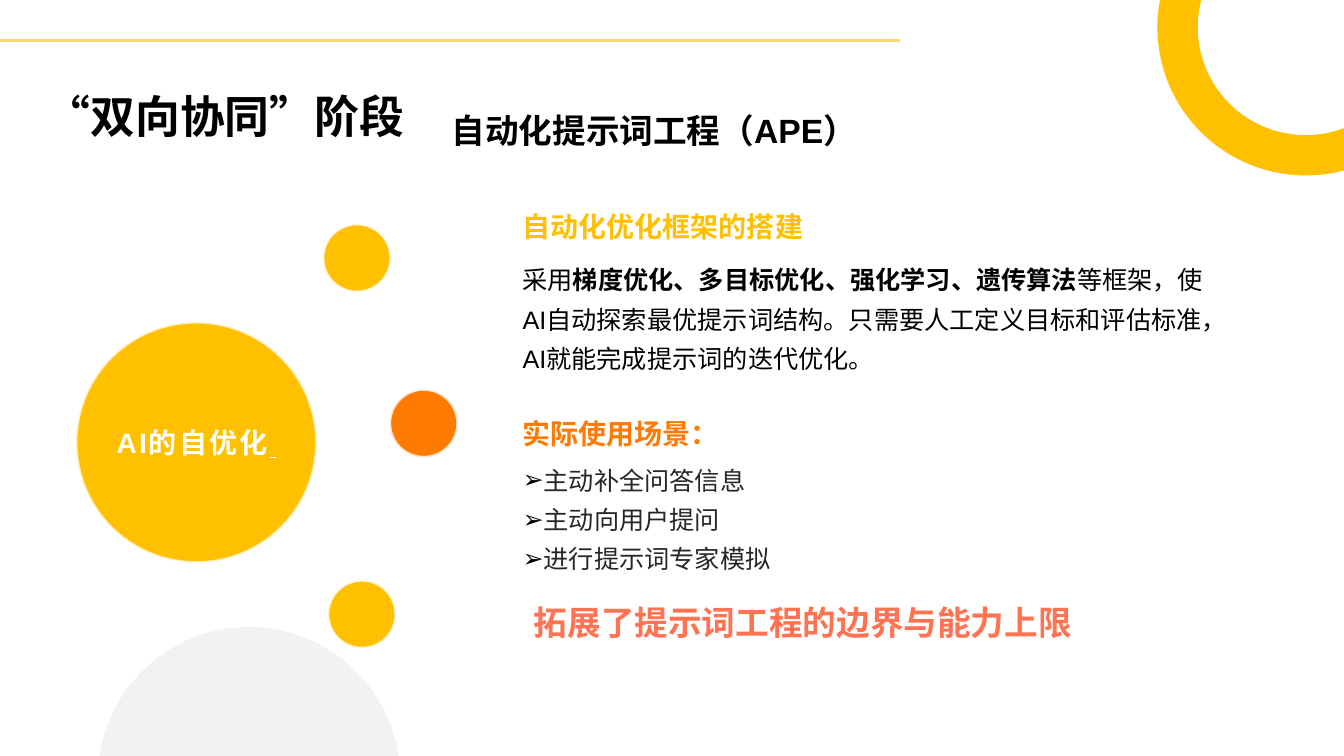
"""Build the slide on automated prompt engineering."""
import math

import pptx
import pptx.dml.color
import pptx.enum.shapes
import pptx.enum.text
import pptx.oxml
import pptx.oxml.ns
import pptx.util

WIDTH, HEIGHT = pptx.util.Inches(13.33), pptx.util.Inches(7.5)
FONT = "Arial"
AMBER, ORANGE, CORAL = "FFC000", "FF7A00", "FF7252"
BLACK, WHITE, CHARCOAL, PALE_AMBER = "000000", "FFFFFF", "262626", "FFD966"
ANCHOR = pptx.enum.text.MSO_ANCHOR
ALIGN = pptx.enum.text.PP_ALIGN

TEXT_LEFT, TEXT_WIDTH = 38.88, 50.94
SUBTITLE = "自动化提示词工程（APE）"
SUBTITLE_AREA = (33.61, 14, 52.06, 6.8)
SCENARIOS = ["主动补全问答信息", "主动向用户提问", "进行提示词专家模拟"]
SCENARIO_AREA = (TEXT_LEFT, 60.33, TEXT_WIDTH, 13.87)
STAGE = "“双向协同”阶段"
STAGE_AREA = (3.4, 10.93, 90.02, 8.93)
METHOD = [
    ("采用", False),
    ("梯度优化、多目标优化、强化学习、遗传算法", True),
    ("等框架，使AI自动探索最优提示词结构。只需要人工定义目标和评估标准，AI就能完成提示词的迭代优化。", False),
]
METHOD_AREA = (TEXT_LEFT, 33.82, TEXT_WIDTH, 16.93)
HEADINGS = [("自动化优化框架的搭建", 24.13, AMBER), ("实际使用场景：", 51.6, ORANGE)]
HEADING_HEIGHT = 8.53
CONCLUSION = "拓展了提示词工程的边界与能力上限"
CONCLUSION_AREA = (TEXT_LEFT, 78.93, 41.71, 6.67)
HUB = "AI的自优化"
HUB_CIRCLE = (14.61, 58.52, 17.78, AMBER, "FFECB2")
DOTS = [
    (31.53, 56, 4.95, ORANGE, "FFE4CC"),
    (26.56, 34.13, 4.95, AMBER, "FFF2CC"),
    (26.93, 81.25, 4.95, AMBER, "FFF2CC"),
]
RING = (97.15, 3.6, 11.03, 8.03)
DOME = (18.53, 102.93, 11.25)
RULE_END, RULE_TOP = 66.99, 5.33


def across(share):
    return round(WIDTH * share / 100)


def down(share):
    return round(HEIGHT * share / 100)


def color(value):
    return pptx.dml.color.RGBColor.from_string(value)


def set_frame(frame, anchor=ANCHOR.TOP, bottom=0):
    frame.word_wrap = True
    frame.auto_size = pptx.enum.text.MSO_AUTO_SIZE.NONE
    frame.vertical_anchor = anchor
    frame.margin_left = frame.margin_right = frame.margin_top = 0
    frame.margin_bottom = pptx.util.Inches(bottom)


def write(para, runs, size, tone, spacing=1.0, align=ALIGN.LEFT):
    para.alignment = align
    para.line_spacing = spacing
    para.space_before = pptx.util.Pt(0)
    for text, bold in runs:
        span = para.add_run()
        span.text = text
        span.font.name = FONT
        span.font.size = pptx.util.Pt(size)
        span.font.bold = bold
        span.font.color.rgb = color(tone)


def place(shape, area):
    left, top, width, height = area
    shape.left, shape.top = across(left), down(top)
    shape.width, shape.height = across(width), down(height)


def add_text(slide, area, runs, size, tone, spacing=1.0, align=ALIGN.LEFT,
             anchor=ANCHOR.TOP, bottom=0):
    box = slide.shapes.add_textbox(0, 0, 0, 0)
    place(box, area)
    set_frame(box.text_frame, anchor, bottom)
    write(box.text_frame.paragraphs[0], runs, size, tone, spacing, align)


def add_bullet(para, mark, indent):
    props = para._p.get_or_add_pPr()
    props.set("marL", str(indent))
    props.set("indent", str(-indent))
    space = pptx.oxml.ns.nsdecls("a")
    for part in (f'<a:buClr {space}><a:srgbClr val="{BLACK}"/></a:buClr>',
                 f'<a:buFont {space} typeface="{FONT}"/>',
                 f'<a:buChar {space} char="{mark}"/>'):
        props.append(pptx.oxml.parse_xml(part))


def arc(center_x, center_y, radius, start, end, pieces=2):
    step = (end - start) / pieces
    reach = 4 / 3 * math.tan(step / 4)
    points = []
    for piece in range(pieces + 1):
        angle = start + step * piece
        cos, sin = math.cos(angle), math.sin(angle)
        pulls = [-reach] * (piece > 0) + [0] + [reach] * (piece < pieces)
        points += [(round(center_x + radius * (cos - pull * sin)),
                    round(center_y + radius * (sin + pull * cos))) for pull in pulls]
    return points


def add_outline(slide, arcs, tone):
    points = [point for curve in arcs for point in curve]
    builder = slide.shapes.build_freeform(*points[0], scale=1.0)
    builder.add_line_segments(points[1:], close=True)
    shape = builder.convert_to_shape()
    name = pptx.oxml.ns.qn
    lines = shape._element.spPr.findall(".//" + name("a:lnTo"))
    start = 0
    for curve in arcs:
        for first in range(start, start + len(curve) - 1, 3):
            bezier = pptx.oxml.parse_xml(f'<a:cubicBezTo {pptx.oxml.ns.nsdecls("a")}/>')
            lines[first].addprevious(bezier)
            for line in lines[first:first + 3]:
                bezier.append(line[0])
                line.getparent().remove(line)
        start += len(curve)
    left, right = min(x for x, _ in points), max(x for x, _ in points)
    shape.shadow.inherit = False
    shape.fill.solid()
    shape.fill.fore_color.rgb = color(tone)
    shape.line.fill.background()
    return shape


def add_ring(slide):
    center_x, center_y = across(RING[0]), down(RING[1])
    edges = []
    for share in RING[2:]:
        radius = across(share)
        start = math.acos((WIDTH - center_x) / radius)
        end = math.pi + math.asin(center_y / radius)
        edges.append(arc(center_x, center_y, radius, start, end))
    outer, inner = edges
    add_outline(slide, [outer, inner[::-1]], AMBER)


def add_dome(slide):
    center_x, center_y, radius = across(DOME[0]), down(DOME[1]), across(DOME[2])
    tilt = math.asin((center_y - HEIGHT) / radius)
    curve = arc(center_x, center_y, radius, math.pi + tilt, 2 * math.pi - tilt)
    dome = add_outline(slide, [curve], BLACK)
    tone = dome._element.spPr.find(".//" + pptx.oxml.ns.qn("a:srgbClr"))
    tone.append(pptx.oxml.parse_xml(f'<a:alpha {pptx.oxml.ns.nsdecls("a")} val="5000"/>'))


def add_circle(slide, center_x, center_y, size, tone, edge):
    diameter = across(size)
    circle = slide.shapes.add_shape(
        pptx.enum.shapes.MSO_SHAPE.OVAL, across(center_x) - diameter // 2,
        down(center_y) - diameter // 2, diameter, diameter)
    circle.shadow.inherit = False
    circle.fill.solid()
    circle.fill.fore_color.rgb = color(tone)
    circle.line.color.rgb = color(edge)
    circle.line.width = pptx.util.Pt(1)
    return circle


def add_rule(slide):
    rule = slide.shapes.add_connector(
        pptx.enum.shapes.MSO_CONNECTOR.STRAIGHT, 0, down(RULE_TOP),
        across(RULE_END), down(RULE_TOP))
    rule.line.color.rgb = color(PALE_AMBER)
    rule.line.width = pptx.util.Pt(2.25)
    rule._element.spPr.append(
        pptx.oxml.parse_xml(f'<a:effectLst {pptx.oxml.ns.nsdecls("a")}/>'))


def build_slide(slide):
    add_ring(slide)
    add_dome(slide)
    title, body = slide.shapes.title, slide.placeholders[1]
    place(title, SUBTITLE_AREA)
    set_frame(title.text_frame)
    write(title.text_frame.paragraphs[0], [(SUBTITLE, True)], 24, BLACK, 1.11)
    place(body, SCENARIO_AREA)
    set_frame(body.text_frame)
    for number, scenario in enumerate(SCENARIOS):
        frame = body.text_frame
        para = frame.add_paragraph() if number else frame.paragraphs[0]
        add_bullet(para, "➢", pptx.util.Inches(0.19))
        write(para, [(scenario, False)], 18, CHARCOAL, 1.3)
    add_text(slide, METHOD_AREA, METHOD, 18, BLACK, 1.3)
    for heading, top, tone in HEADINGS:
        add_text(slide, (TEXT_LEFT, top, TEXT_WIDTH, HEADING_HEIGHT),
                 [(heading, True)], 20, tone, anchor=ANCHOR.BOTTOM, bottom=0.04)
    for dot in DOTS:
        add_circle(slide, *dot)
    hub = add_circle(slide, *HUB_CIRCLE)
    set_frame(hub.text_frame, ANCHOR.MIDDLE)
    para = hub.text_frame.paragraphs[0]
    write(para, [(HUB, True), (" ", True)], 20, WHITE, align=ALIGN.CENTER)
    para.runs[1].font.underline = True
    for span in para.runs:
        span.font._element.set("spc", "150")
    add_text(slide, CONCLUSION_AREA, [(CONCLUSION, True)], 24, CORAL,
             align=ALIGN.CENTER, anchor=ANCHOR.MIDDLE)
    add_rule(slide)
    add_text(slide, STAGE_AREA, [(STAGE, True)], 32, BLACK, 1.11)


deck = pptx.Presentation()
deck.slide_width, deck.slide_height = WIDTH, HEIGHT
build_slide(deck.slides.add_slide(deck.slide_layouts[1]))
deck.save("out.pptx")
